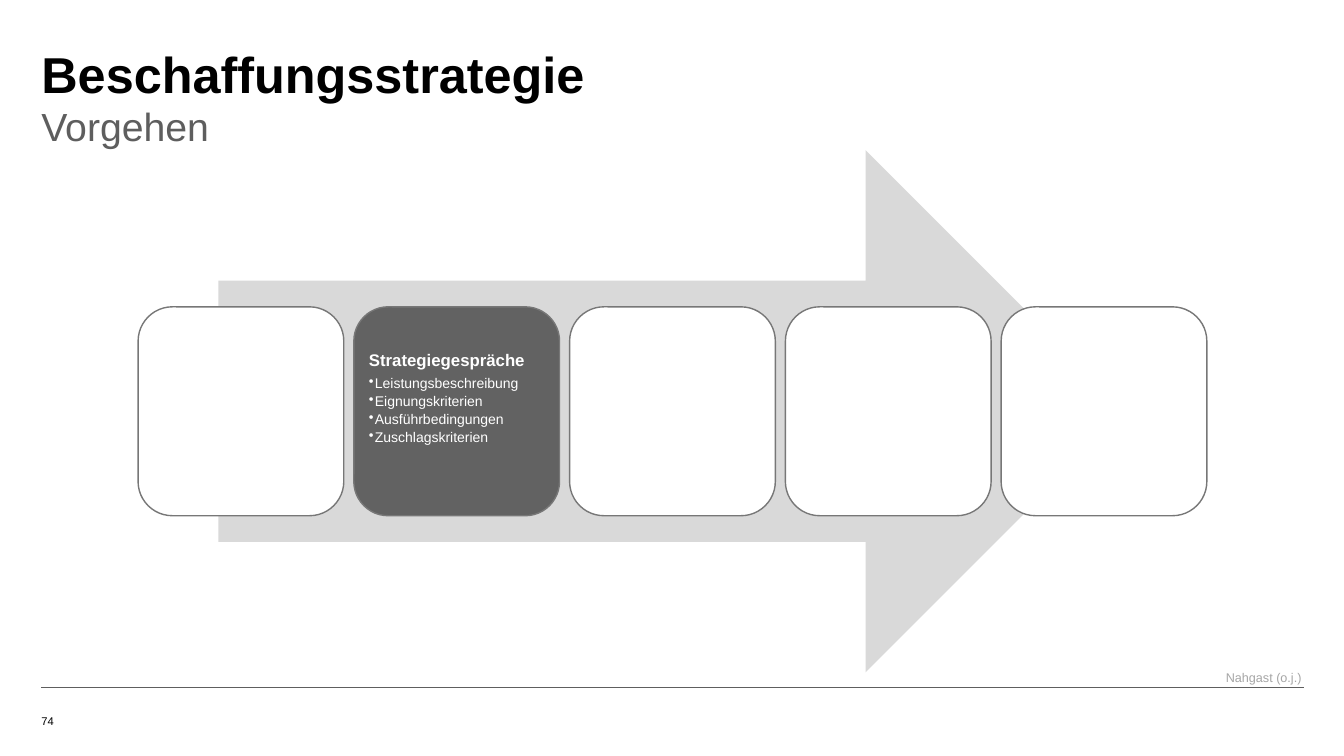
from pptx import Presentation
from pptx.dml.color import RGBColor as RGB
from pptx.enum.shapes import MSO_CONNECTOR as CONN, MSO_SHAPE as SHAPE
from pptx.enum.text import MSO_ANCHOR as ANCHOR, MSO_AUTO_SIZE as AUTO, PP_ALIGN as ALIGN
from pptx.oxml.ns import qn
from pptx.util import Inches, Pt
from lxml import etree

COLORS = {
    "black": "000000", "white": "FFFFFF", "subtitle": "5E5E5E", "arrow": "D9D9D9",
    "active": "626262", "border": "777777", "source": "A6A6A6",
}
STEPS = [
    [],
    ["Strategiegespräche", "Leistungsbeschreibung", "Eignungskriterien",
     "Ausführbedingungen", "Zuschlagskriterien"],
    [], [], [],
]


def set_attrs(obj, **values):
    """Set every given attribute on an object."""
    for name, value in values.items():
        setattr(obj, name, value)


def format_frame(tf, inset=0, **values):
    """Set equal margins and further attributes of a text frame."""
    sides = ("left", "top", "right", "bottom")
    margins = {f"margin_{side}": Inches(inset) for side in sides}
    set_attrs(tf, **{**margins, "word_wrap": True, "auto_size": AUTO.NONE, **values})


def write(p, text, size, color, bold=False, bullet=None, indent=0, **spacing):
    """Write one formatted paragraph, with or without a bullet."""
    pPr = p._p.get_or_add_pPr()
    pPr.set("marL", str(Inches(indent)))
    pPr.set("indent", str(-Inches(indent)))
    if bullet:
        etree.SubElement(pPr, qn("a:buChar"), char=bullet)
    else:
        etree.SubElement(pPr, qn("a:buNone"))
    set_attrs(p, **{"alignment": ALIGN.LEFT, "space_before": Pt(0), **spacing})
    r = p.add_run()
    r.text = text
    set_attrs(r.font, name="Arial", size=Pt(size), bold=bold)
    r.font.color.rgb = RGB.from_string(COLORS[color])


def place(sp, x, y, w, h):
    """Move a shape to a box given in inches."""
    set_attrs(sp, left=Inches(x), top=Inches(y), width=Inches(w), height=Inches(h))


def add_block(s, kind, x, y, w, h, fill, border=None):
    """Add a filled preset shape with an optional outline."""
    sp = s.shapes.add_shape(kind, Inches(x), Inches(y), Inches(w), Inches(h))
    sp.shadow.inherit = False
    sp.fill.solid()
    sp.fill.fore_color.rgb = RGB.from_string(COLORS[fill])
    if border:
        sp.line.color.rgb = RGB.from_string(COLORS[border])
        sp.line.width = Pt(1)
    else:
        sp.line.fill.background()
    return sp


def add_heading(s, x, y, w):
    """Fill the title and the subtitle below it."""
    title, body = s.shapes.title, s.placeholders[1]
    place(title, x, y, w, 0.62)
    format_frame(title.text_frame, vertical_anchor=ANCHOR.BOTTOM)
    write(title.text_frame.paragraphs[0], "Beschaffungsstrategie", 36, "black", bold=True)
    place(body, x, y + 0.54, w, 0.55)
    format_frame(body.text_frame, vertical_anchor=ANCHOR.MIDDLE)
    write(body.text_frame.paragraphs[0], "Vorgehen", 28, "subtitle", line_spacing=1.1)


def add_step(s, x, y, w, h, lines):
    """Add one process step, dark if it holds text."""
    fill = "active" if lines else "white"
    sp = add_block(s, SHAPE.ROUNDED_RECTANGLE, x, y, w, h, fill, "border")
    if not lines:
        return
    tf = sp.text_frame
    format_frame(tf, 0.05, margin_top=Inches(0.35), vertical_anchor=ANCHOR.TOP)
    heading, *items = lines
    write(tf.paragraphs[0], heading, 12, "white", bold=True,
          line_spacing=0.9, space_after=Pt(4.5))
    for item in items:
        write(tf.add_paragraph(), item, 10, "white", bullet="•", indent=0.06,
              level=1, line_spacing=0.9, space_after=Pt(2))


def add_process(s, x, y, w, h, gap=0.1):
    """Add the arrow and a row of equal steps across it."""
    arrow_w, step_h = 0.85 * w, 0.4 * h
    add_block(s, SHAPE.RIGHT_ARROW, x + (w - arrow_w) / 2, y, arrow_w, h, "arrow")
    step_w = (w - gap * (len(STEPS) - 1)) / len(STEPS)
    for i, lines in enumerate(STEPS):
        add_step(s, x + i * (step_w + gap), y + (h - step_h) / 2, step_w, step_h, lines)


def add_label(s, x, y, w, h, text, size, color, inset=0, **values):
    """Add a single-line text box."""
    tf = s.shapes.add_textbox(Inches(x), Inches(y), Inches(w), Inches(h)).text_frame
    format_frame(tf, inset, **values)
    write(tf.paragraphs[0], text, size, color)


def add_footer(s, x, y, w):
    """Add the rule with the page number below and the source above."""
    rule = s.shapes.add_connector(CONN.STRAIGHT, Inches(x), Inches(y), Inches(x + w), Inches(y))
    rule.line.color.rgb = RGB.from_string(COLORS["subtitle"])
    rule.line.width = Pt(0.5)
    etree.SubElement(rule._element.spPr, qn("a:effectLst"))
    add_label(s, x, y + 0.08, 1.57, 0.32, "74", 8, "black", vertical_anchor=ANCHOR.BOTTOM)
    add_label(s, x + w - 0.87, y - 0.22, 0.96, 0.25, "Nahgast (o.j.)", 9, "source",
              inset=0.1, margin_top=Inches(0.05), margin_bottom=Inches(0.05),
              word_wrap=False, auto_size=AUTO.SHAPE_TO_FIT_TEXT)


def main():
    """Build and save the slide."""
    prs = Presentation()
    set_attrs(prs, slide_width=Inches(13.33), slide_height=Inches(7.5))
    s = prs.slides.add_slide(prs.slide_layouts[1])
    add_footer(s, 0.41, 6.82, 12.52)
    add_process(s, 1.37, 1.49, 10.6, 5.18)
    add_heading(s, 0.41, 0.41, 9.65)
    prs.save("out.pptx")


if __name__ == "__main__":
    main()
